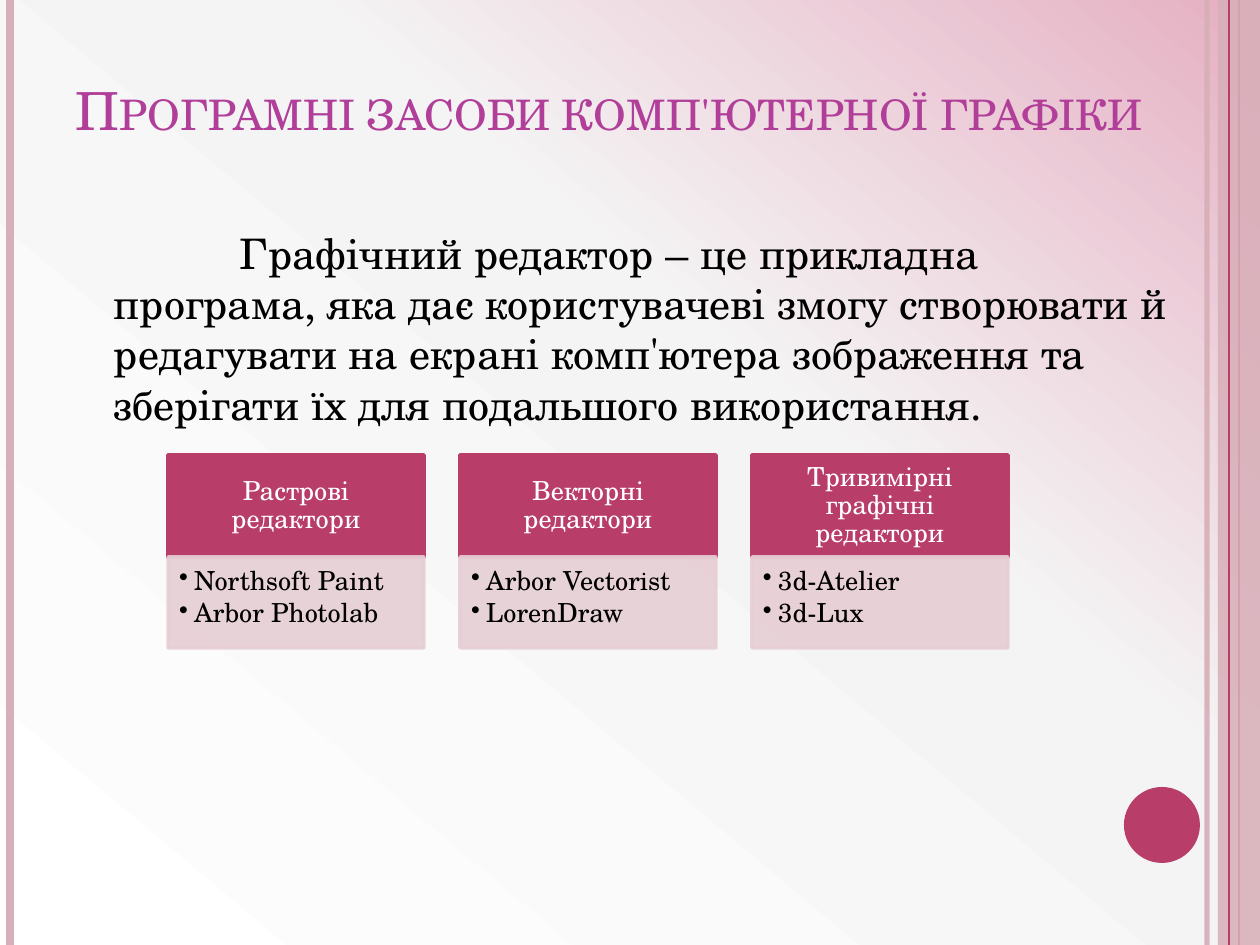
from dataclasses import dataclass

from lxml import etree
from pptx import Presentation
from pptx import util as u
from pptx.dml.color import RGBColor
from pptx.enum import shapes, text
from pptx.oxml.ns import qn

PX_PER_INCH = 126
WIDTH, HEIGHT = 1260, 945


@dataclass(frozen=True)
class Theme:
    """Colours, font and type sizes of the slide."""
    font: str = "TeX Gyre Schola"
    accent: str = "B83D68"
    stripe: str = "D8AFB9"
    card: str = "E6CED4"
    title: str = "B13F9A"
    ink: str = "000000"
    white: str = "FFFFFF"
    glow: tuple = ((0, "E5AFC2", 83), (40, "F4F4F4", 100), (100, "FFFFFF", 100))
    title_size: int = 30
    body_size: int = 24
    card_size: int = 15


THEME = Theme()
TITLE = "Програмні засоби комп'ютерної графіки"
DEFINITION = (
    "Графічний редактор – це прикладна програма, яка дає користувачеві змогу "
    "створювати й редагувати на екрані комп'ютера зображення та зберігати їх "
    "для подальшого використання."
)
EDITORS = (
    ("Растрові редактори", ("Northsoft Paint", "Arbor Photolab")),
    ("Векторні редактори", ("Arbor Vectorist", "LorenDraw")),
    ("Тривимірні графічні редактори", ("3d-Atelier", "3d-Lux")),
)


def px(length):
    """Turn whole pixels into EMU."""
    return u.Inches(length / PX_PER_INCH)


def child(parent, tag, **attributes):
    """Append a DrawingML element to a parent."""
    return etree.SubElement(parent, qn(f"a:{tag}"), attributes)


def set_alpha(fill_parent, percent):
    """Make the solid colour under an element partly transparent."""
    colour = next(fill_parent.iter(qn("a:srgbClr")))
    child(colour, "alpha", val=str(percent * 1000))


def paint_background(page):
    """Fill the page with the slanted gradient."""
    fill = page.background.fill
    fill.gradient()
    fill.gradient_angle = 230
    stops = next(page.element.iter(qn("a:gsLst")))
    for stop in list(stops):
        stops.remove(stop)
    for position, colour, alpha in THEME.glow:
        stop = child(stops, "gs", pos=str(position * 1000))
        child(stop, "srgbClr", val=colour)
        if alpha < 100:
            set_alpha(stop, alpha)


def add_stripe(page, x, colour, weight, alpha=100):
    """Draw a full-height vertical line."""
    stripe = page.shapes.add_connector(
        shapes.MSO_CONNECTOR.STRAIGHT, px(x), 0, px(x), px(HEIGHT))
    stripe.line.color.rgb = RGBColor.from_string(colour)
    stripe.line.width = u.Pt(weight)
    properties = stripe.element.spPr
    if alpha < 100:
        set_alpha(properties, alpha)
    child(properties, "effectLst")


def add_block(page, kind, frame, colour, alpha=100, outline=0):
    """Add a flat preset shape, outlined in its own colour if asked."""
    block = page.shapes.add_shape(kind, *map(px, frame))
    block.shadow.inherit = False
    block.fill.solid()
    block.fill.fore_color.rgb = RGBColor.from_string(colour)
    if alpha < 100:
        set_alpha(block.element.spPr, alpha)
    if outline:
        block.line.color.rgb = RGBColor.from_string(colour)
        block.line.width = u.Pt(outline)
        if alpha < 100:
            set_alpha(block.line._get_or_add_ln(), alpha)
    else:
        block.line.fill.background()
    return block


def write(box, lines, size, colour, anchor, insets=(13, 6, 13, 6),
          align=text.PP_ALIGN.LEFT):
    """Write paragraphs into a box and return them."""
    frame = box.text_frame
    frame.word_wrap = True
    frame.vertical_anchor = anchor
    (frame.margin_left, frame.margin_top,
     frame.margin_right, frame.margin_bottom) = map(px, insets)
    frame.text = "\n".join(lines)
    for para in frame.paragraphs:
        para.alignment = align
        para.font.name = THEME.font
        para.font.size = u.Pt(size)
        para.font.color.rgb = RGBColor.from_string(colour)
    return frame.paragraphs


def set_indent(para, margin, first):
    """Set the left margin and first-line indent of a paragraph."""
    properties = para._p.get_or_add_pPr()
    properties.set("marL", str(px(margin)))
    properties.set("indent", str(px(first)))
    return properties


def add_bullet(para):
    """Give a paragraph a hanging round bullet."""
    properties = set_indent(para, 15, -15)
    bullet = etree.Element(qn("a:buChar"), char="•")
    properties.find(qn("a:defRPr")).addprevious(bullet)


def add_title(page):
    """Add the title in small capitals."""
    box = page.shapes.add_textbox(*map(px, (63, 38, 1128, 109)))
    para, = write(box, [TITLE], THEME.title_size, THEME.title,
                  text.MSO_ANCHOR.BOTTOM)
    para._p.pPr.find(qn("a:defRPr")).set("cap", "small")


def add_definition(page):
    """Add the definition with its deep first-line indent."""
    box = page.shapes.add_textbox(*map(px, (63, 221, 1119, 672)))
    para, = write(box, [DEFINITION], THEME.body_size, THEME.ink,
                  text.MSO_ANCHOR.TOP)
    para.space_before = u.Pt(6)
    set_indent(para, 38, 126)


def add_editor_card(page, x, heading, programs):
    """Add a heading block with its list of programs below."""
    rectangle = shapes.MSO_SHAPE.RECTANGLE
    head = add_block(page, rectangle, (x, 455, 256, 102), THEME.accent, outline=2)
    para, = write(head, [heading], THEME.card_size, THEME.white,
                  text.MSO_ANCHOR.MIDDLE, (15, 9, 15, 9), text.PP_ALIGN.CENTER)
    para.line_spacing = 0.9
    body = add_block(page, rectangle, (x, 557, 256, 91), THEME.card, 90, outline=2)
    for para in write(body, programs, THEME.card_size, THEME.ink,
                      text.MSO_ANCHOR.TOP, (11, 11, 15, 16)):
        para.line_spacing = 0.9
        para.space_after = u.Pt(2.25)
        add_bullet(para)


def add_decoration(page):
    """Add the side stripes, the right band and the corner disc."""
    add_stripe(page, 1207, THEME.stripe, 3, 93)
    add_stripe(page, 10, THEME.stripe, 4.5)
    add_stripe(page, 1239, THEME.accent, 1.5)
    add_block(page, shapes.MSO_SHAPE.RECTANGLE, (1218, 0, 42, HEIGHT),
              THEME.stripe, 87)
    add_stripe(page, 1229, THEME.accent, 0.75)
    add_block(page, shapes.MSO_SHAPE.OVAL, (1124, 787, 76, 76), THEME.accent)


def main():
    """Build the slide and save it."""
    deck = Presentation()
    deck.slide_width, deck.slide_height = px(WIDTH), px(HEIGHT)
    page = deck.slides.add_slide(deck.slide_layouts[6])
    paint_background(page)
    add_decoration(page)
    add_title(page)
    add_definition(page)
    for column, (heading, programs) in enumerate(EDITORS):
        add_editor_card(page, 168 + 292 * column, heading, programs)
    deck.save("out.pptx")


if __name__ == "__main__":
    main()
